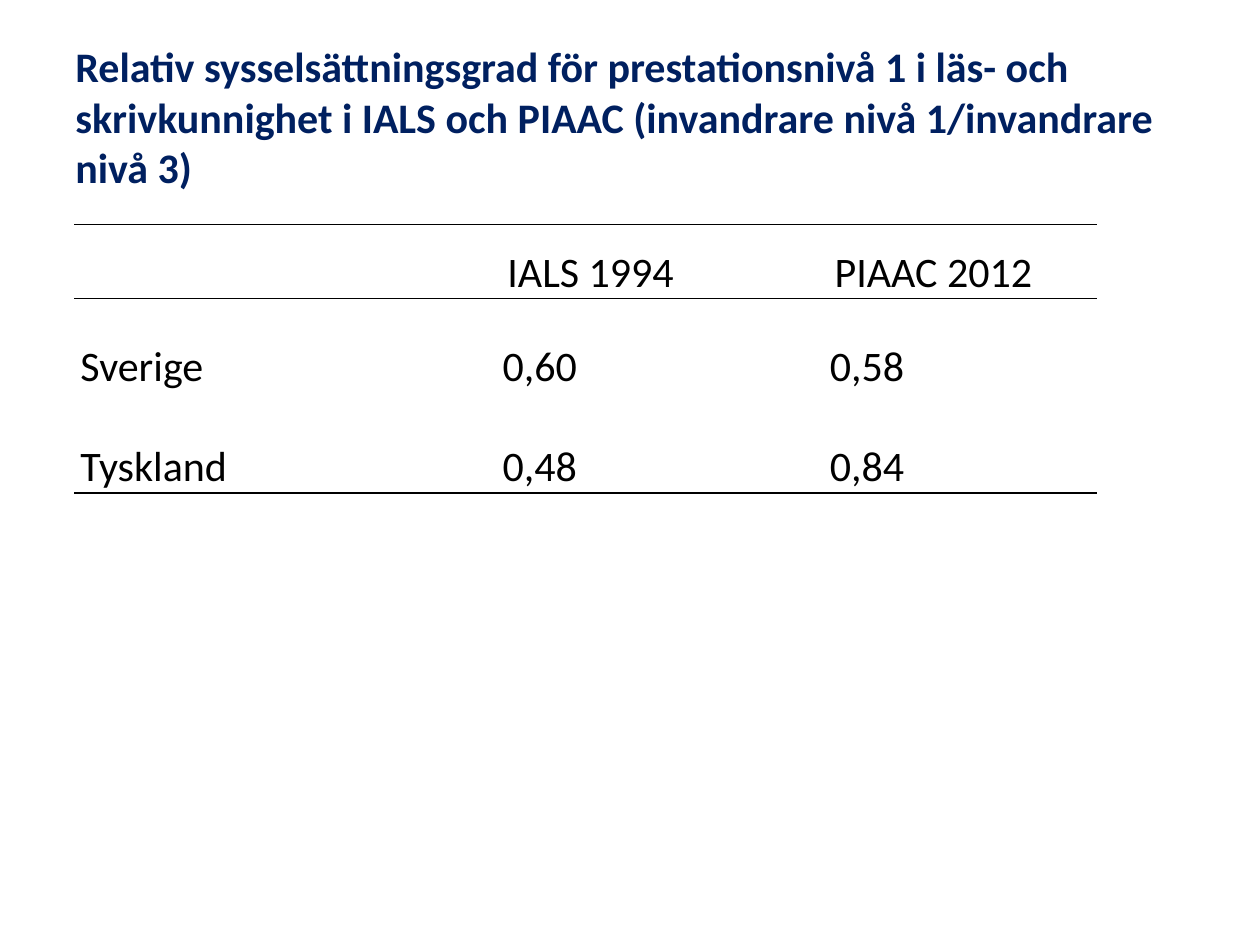
from lxml import etree
from pptx import Presentation
from pptx.dml.color import RGBColor
from pptx.enum.text import MSO_ANCHOR
from pptx.oxml.ns import qn
from pptx.util import Pt

NAVY = RGBColor(0x00, 0x20, 0x60)
BLACK = RGBColor(0x00, 0x00, 0x00)
WHITE = RGBColor(0xFF, 0xFF, 0xFF)
MIDDLE, BOTTOM = MSO_ANCHOR.MIDDLE, MSO_ANCHOR.BOTTOM

TITLE = ("Relativ sysselsättningsgrad för prestationsnivå 1 i läs- och "
         "skrivkunnighet i IALS och PIAAC (invandrare nivå 1/invandrare nivå 3)")
ROWS = [
    ["", "IALS 1994", "PIAAC 2012"],
    ["Sverige", "0,60", "0,58"],
    ["Tyskland", "0,48", "0,84"],
]
COL_WIDTHS = [244, 187, 153.4]
ROW_HEIGHTS = [42.5, 54, 56.9]


class SlideBuilder:
    font = "Calibri"
    size = 24
    rule_width = 1

    def __init__(self, slide):
        self.slide = slide

    def style(self, p, color, bold=False):
        p.font.name = self.font
        p.font.size = Pt(self.size)
        p.font.bold = bold
        p.font.color.rgb = color

    def title(self, text, left, top, width, height):
        sp = self.slide.shapes.add_textbox(Pt(left), Pt(top), Pt(width), Pt(height))
        tf = sp.text_frame
        tf.word_wrap = True
        tf.vertical_anchor = MIDDLE
        p = tf.paragraphs[0]
        p.text = text
        self.style(p, NAVY, bold=True)

    def borders(self, cell, ruled):
        """Draw black rules on the sides named in ruled and clear the others."""
        tc_pr = cell._tc.get_or_add_tcPr()
        for side in ("lnL", "lnR", "lnT", "lnB"):
            ln = etree.SubElement(tc_pr, qn(f"a:{side}"), w=str(Pt(self.rule_width)))
            if side in ruled:
                fill = etree.SubElement(ln, qn("a:solidFill"))
                etree.SubElement(fill, qn("a:srgbClr"), val=str(BLACK))
            else:
                etree.SubElement(ln, qn("a:noFill"))

    def cell(self, cell, text, is_value, ruled):
        self.borders(cell, ruled)
        cell.fill.solid()
        cell.fill.fore_color.rgb = WHITE
        cell.vertical_anchor = BOTTOM
        cell.margin_left = cell.margin_right = Pt(0.75 if is_value else 3.5)
        cell.margin_top = Pt(0.75 if is_value else 0)
        cell.margin_bottom = 0
        p = cell.text_frame.paragraphs[0]
        p.text = text
        if not is_value:
            p.line_spacing = 1.15
        self.style(p, BLACK)

    def table(self, rows, left, top, widths, heights):
        """Rule the table above and below its header and under its last row."""
        frame = self.slide.shapes.add_table(
            len(rows), len(widths), Pt(left), Pt(top), Pt(sum(widths)), Pt(sum(heights)))
        table = frame.table
        table.first_row = table.horz_banding = False
        for column, width in zip(table.columns, widths):
            column.width = Pt(width)
        rules = [("lnT", "lnB"), ("lnT",), ("lnB",)]
        for i, (texts, height) in enumerate(zip(rows, heights)):
            table.rows[i].height = Pt(height)
            for j, text in enumerate(texts):
                self.cell(table.cell(i, j), text, i > 0 and j > 0, rules[i])


def main():
    prs = Presentation()
    prs.slide_width, prs.slide_height = Pt(720), Pt(540)
    builder = SlideBuilder(prs.slides.add_slide(prs.slide_layouts[6]))
    builder.title(TITLE, 36, 21.6, 648, 90)
    builder.table(ROWS, 42.5, 128.2, COL_WIDTHS, ROW_HEIGHTS)
    prs.save("out.pptx")


if __name__ == "__main__":
    main()
